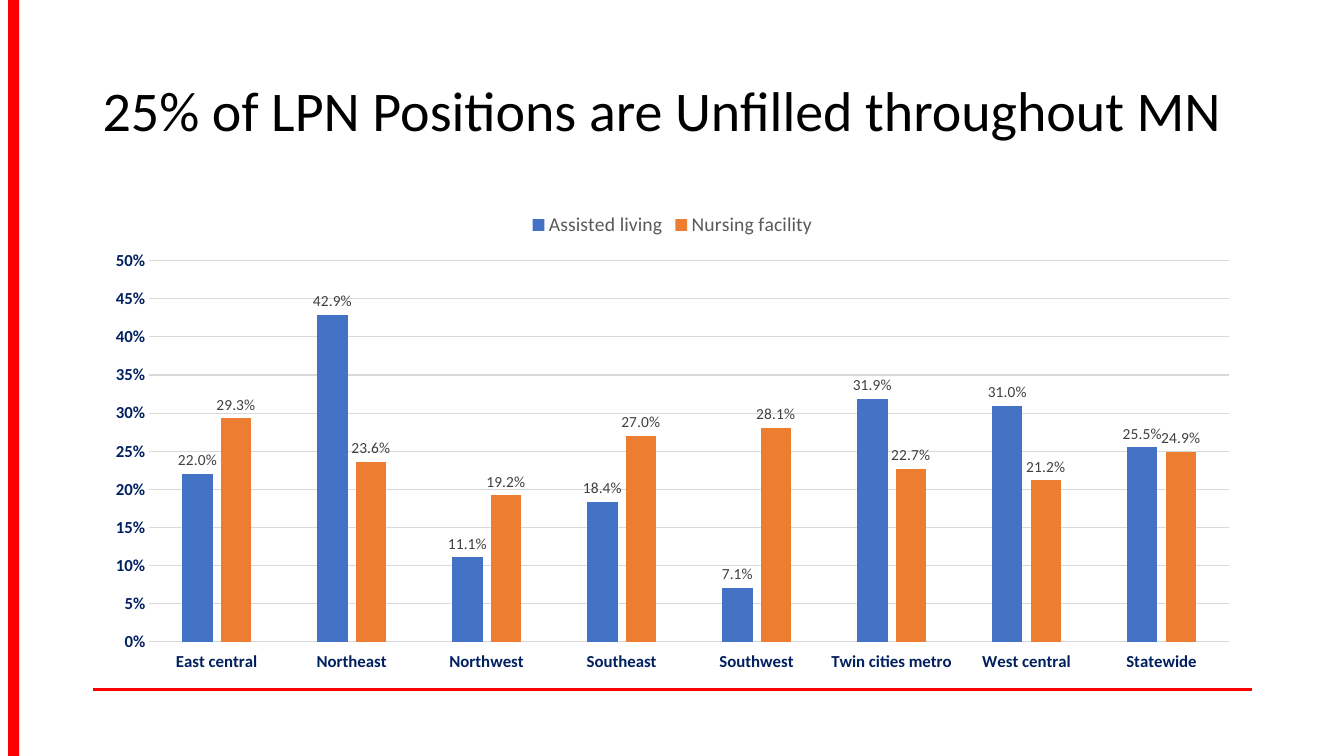
"""Build the slide on unfilled LPN positions by region."""
import pptx
import pptx.chart.data
import pptx.dml.color
import pptx.enum.chart
import pptx.enum.shapes
import pptx.enum.text
import pptx.oxml
import pptx.util
from pptx.util import Inches

TITLE = "25% of LPN Positions are Unfilled throughout MN"
AREAS = ["East central", "Northeast", "Northwest", "Southeast",
         "Southwest", "Twin cities metro", "West central", "Statewide"]
RATES = {
    "Assisted living": [0.22, 0.429, 0.111, 0.184, 0.071, 0.319, 0.31, 0.255],
    "Nursing facility": [0.293, 0.236, 0.192, 0.27, 0.281, 0.227, 0.212, 0.249],
}
COLORS = {
    "red": "FF0000", "black": "000000", "navy": "002060", "grid": "D9D9D9",
    "legend": "595959", "label": "404040",
    "Assisted living": "4472C4", "Nursing facility": "ED7D31",
}
FONT = "Calibri"
LEFT, WIDTH = 0.92, 11.5
Enum = pptx.enum.chart
FORMATS = {
    "axis": {"major_tick_mark": Enum.XL_TICK_MARK.NONE,
             "minor_tick_mark": Enum.XL_TICK_MARK.NONE},
    "cat": {"tick_label_position": Enum.XL_TICK_LABEL_POSITION.LOW},
    "val": {"minimum_scale": 0, "maximum_scale": 0.5, "major_unit": 0.05,
            "has_major_gridlines": True},
    "ticks": {"number_format": "0%", "number_format_is_linked": False},
    "plot": {"gap_width": 219, "overlap": -27, "vary_by_categories": False},
    "legend": {"position": Enum.XL_LEGEND_POSITION.TOP,
               "include_in_layout": False},
    "labels": {"show_value": True, "number_format": "0.0%",
               "number_format_is_linked": False,
               "position": Enum.XL_LABEL_POSITION.OUTSIDE_END},
    "title": {"word_wrap": True,
              "vertical_anchor": pptx.enum.text.MSO_ANCHOR.MIDDLE},
}


def apply(item, key):
    for name, value in FORMATS[key].items():
        setattr(item, name, value)


def rgb(key):
    return pptx.dml.color.RGBColor.from_string(COLORS[key])


def style(font, size, color, bold=False):
    values = {"name": FONT, "size": pptx.util.Pt(size), "bold": bold}
    for name, value in values.items():
        setattr(font, name, value)
    font.color.rgb = rgb(color)


def stroke(line, color, width):
    line.color.rgb = rgb(color)
    line.width = pptx.util.Pt(width)


def add_frame(slide):
    rule = slide.shapes.add_connector(
        pptx.enum.shapes.MSO_CONNECTOR.STRAIGHT,
        Inches(LEFT), Inches(6.84), Inches(LEFT + WIDTH), Inches(6.84))
    stroke(rule.line, "red", 2)
    rule._element.spPr.append(pptx.oxml.parse_xml(
        '<a:effectLst xmlns:a='
        '"http://schemas.openxmlformats.org/drawingml/2006/main"/>'))
    band = slide.shapes.add_shape(
        pptx.enum.shapes.MSO_SHAPE.RECTANGLE,
        Inches(0.08), 0, Inches(0.11), Inches(7.5))
    band.shadow.inherit = False
    band.fill.solid()
    band.fill.fore_color.rgb = rgb("red")
    band.line.fill.background()


def add_title(slide):
    box = slide.shapes.add_textbox(
        Inches(LEFT), Inches(0.4), Inches(WIDTH), Inches(1.45))
    apply(box.text_frame, "title")
    para = box.text_frame.paragraphs[0]
    para.text = TITLE
    para.line_spacing = 0.9
    style(para.runs[0].font, 40, "black")


def add_rates(slide):
    data = pptx.chart.data.CategoryChartData(number_format="0.0%")
    data.categories = AREAS
    for name, values in RATES.items():
        data.add_series(name, values)
    chart = slide.shapes.add_chart(
        Enum.XL_CHART_TYPE.COLUMN_CLUSTERED,
        Inches(LEFT), Inches(2), Inches(WIDTH), Inches(4.76), data).chart
    style(chart.font, 10, "black")
    chart.has_title = False
    chart.has_legend = True
    apply(chart.legend, "legend")
    style(chart.legend.font, 14, "legend")

    cat, val = chart.category_axis, chart.value_axis
    for axis, key in ((cat, "cat"), (val, "val")):
        apply(axis, "axis")
        apply(axis, key)
        style(axis.tick_labels.font, 12, "navy", True)
    apply(val.tick_labels, "ticks")
    stroke(cat.format.line, "grid", 0.75)
    stroke(val.major_gridlines.format.line, "grid", 0.75)
    val.format.line.fill.background()

    plot = chart.plots[0]
    apply(plot, "plot")
    for series in plot.series:
        series.invert_if_negative = False
        series.format.fill.solid()
        series.format.fill.fore_color.rgb = rgb(series.name)
        apply(series.data_labels, "labels")
        style(series.data_labels.font, 11, "label")


def main():
    deck = pptx.Presentation()
    deck.slide_width, deck.slide_height = Inches(13.33), Inches(7.5)
    slide = deck.slides.add_slide(deck.slide_layouts[6])
    for step in (add_frame, add_title, add_rates):
        step(slide)
    deck.save("out.pptx")


if __name__ == "__main__":
    main()
